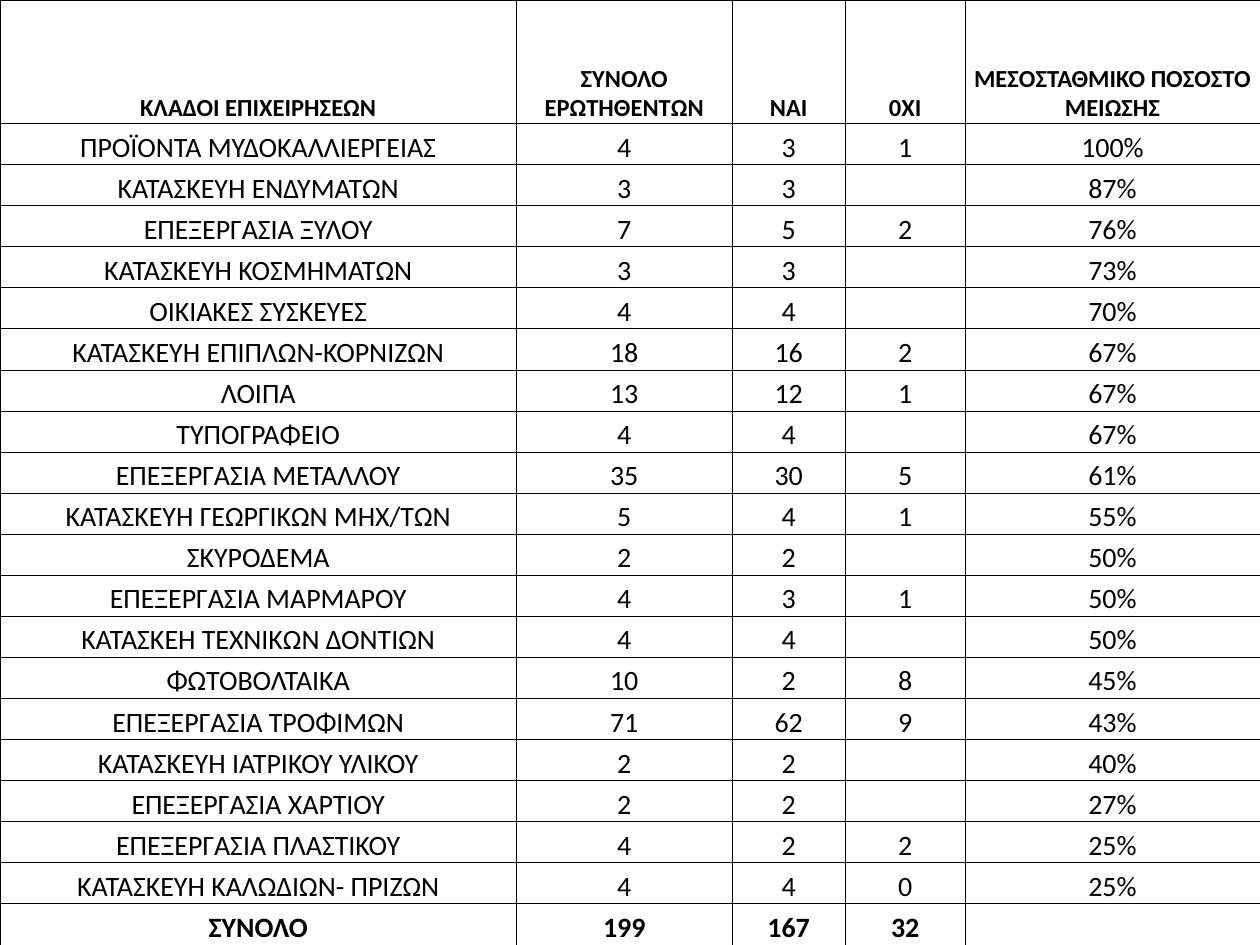
import pptx
import pptx.dml.color
import pptx.enum.text
import pptx.oxml
import pptx.oxml.ns
import pptx.util
from dataclasses import dataclass

Inches = pptx.util.Inches
Pt = pptx.util.Pt
RGBColor = pptx.dml.color.RGBColor


@dataclass(frozen=True)
class Theme:
    font: str = "Calibri"
    ink: str = "000000"
    paper: str = "FFFFFF"
    header_size: int = 14
    body_size: int = 16
    border: float = 0.5


THEME = Theme()

HEADER = ("ΚΛΑΔΟΙ ΕΠΙΧΕΙΡΗΣΕΩΝ", "ΣΥΝΟΛΟ ΕΡΩΤΗΘΕΝΤΩΝ", "ΝΑΙ", "0ΧΙ",
          "ΜΕΣΟΣΤΑΘΜΙΚΟ ΠΟΣΟΣΤΟ ΜΕΙΩΣΗΣ")
SECTORS = [
    ("ΠΡΟΪΟΝΤΑ ΜΥΔΟΚΑΛΛΙΕΡΓΕΙΑΣ", "4", "3", "1", "100%"),
    ("ΚΑΤΑΣΚΕΥΗ ΕΝΔΥΜΑΤΩΝ", "3", "3", "", "87%"),
    ("ΕΠΕΞΕΡΓΑΣΙΑ ΞΥΛΟΥ", "7", "5", "2", "76%"),
    ("ΚΑΤΑΣΚΕΥΗ ΚΟΣΜΗΜΑΤΩΝ", "3", "3", "", "73%"),
    ("ΟΙΚΙΑΚΕΣ ΣΥΣΚΕΥΕΣ", "4", "4", "", "70%"),
    ("ΚΑΤΑΣΚΕΥΗ ΕΠΙΠΛΩΝ-ΚΟΡΝΙΖΩΝ", "18", "16", "2", "67%"),
    ("ΛΟΙΠΑ", "13", "12", "1", "67%"),
    ("ΤΥΠΟΓΡΑΦΕΙΟ", "4", "4", "", "67%"),
    ("ΕΠΕΞΕΡΓΑΣΙΑ ΜΕΤΑΛΛΟΥ", "35", "30", "5", "61%"),
    ("ΚΑΤΑΣΚΕΥΗ ΓΕΩΡΓΙΚΩΝ ΜΗΧ/ΤΩΝ", "5", "4", "1", "55%"),
    ("ΣΚΥΡΟΔΕΜΑ", "2", "2", "", "50%"),
    ("ΕΠΕΞΕΡΓΑΣΙΑ ΜΑΡΜΑΡΟΥ", "4", "3", "1", "50%"),
    ("ΚΑΤΑΣΚΕΗ ΤΕΧΝΙΚΩΝ ΔΟΝΤΙΩΝ", "4", "4", "", "50%"),
    ("ΦΩΤΟΒΟΛΤΑΙΚΑ", "10", "2", "8", "45%"),
    ("ΕΠΕΞΕΡΓΑΣΙΑ ΤΡΟΦΙΜΩΝ", "71", "62", "9", "43%"),
    ("ΚΑΤΑΣΚΕΥΗ ΙΑΤΡΙΚΟΥ ΥΛΙΚΟΥ", "2", "2", "", "40%"),
    ("ΕΠΕΞΕΡΓΑΣΙΑ ΧΑΡΤΙΟΥ", "2", "2", "", "27%"),
    ("ΕΠΕΞΕΡΓΑΣΙΑ ΠΛΑΣΤΙΚΟΥ", "4", "2", "2", "25%"),
    ("ΚΑΤΑΣΚΕΥΗ ΚΑΛΩΔΙΩΝ- ΠΡΙΖΩΝ", "4", "4", "0", "25%"),
]
TOTAL = ("ΣΥΝΟΛΟ", "199", "167", "32", "")
COLUMN_WIDTHS = (4.1, 1.71, 0.9, 0.95, 2.34)
HEADER_HEIGHT = 0.98


def write_cell(cell, text, size=THEME.body_size, bold=False):
    cell.margin_left = cell.margin_right = 0
    cell.margin_top = cell.margin_bottom = 0
    cell.vertical_anchor = pptx.enum.text.MSO_ANCHOR.BOTTOM
    p = cell.text_frame.paragraphs[0]
    p.alignment = pptx.enum.text.PP_ALIGN.CENTER
    if text:
        r = p.add_run()
        r.text = text
        r.font.name = THEME.font
        r.font.size = Pt(size)
        r.font.bold = bold
        r.font.color.rgb = RGBColor.from_string(THEME.ink)


def draw_borders(cell):
    """Outline all four sides; call before the fill, which must follow in the XML."""
    for side in ("lnL", "lnR", "lnT", "lnB"):
        cell._tc.get_or_add_tcPr().append(pptx.oxml.parse_xml(
            f'<a:{side} {pptx.oxml.ns.nsdecls("a")} w="{Pt(THEME.border)}">'
            f'<a:solidFill><a:srgbClr val="{THEME.ink}"/></a:solidFill></a:{side}>'))


prs = pptx.Presentation()
prs.slide_width = Inches(10)
prs.slide_height = Inches(7.5)
s = prs.slides.add_slide(prs.slide_layouts[6])

rows = [HEADER, *SECTORS, TOTAL]
table = s.shapes.add_table(len(rows), len(HEADER), 0, 0,
                           prs.slide_width, prs.slide_height).table
table.first_row = False
table.horz_banding = False
for column, width in zip(table.columns, COLUMN_WIDTHS):
    column.width = Inches(width)
body_height = (prs.slide_height - Inches(HEADER_HEIGHT)) // (len(rows) - 1)

for i, texts in enumerate(rows):
    is_header = texts is HEADER
    table.rows[i].height = Inches(HEADER_HEIGHT) if is_header else body_height
    for j, text in enumerate(texts):
        cell = table.cell(i, j)
        write_cell(cell, text, bold=is_header or texts is TOTAL,
                   size=THEME.header_size if is_header else THEME.body_size)
        draw_borders(cell)
        cell.fill.solid()
        cell.fill.fore_color.rgb = RGBColor.from_string(THEME.paper)

prs.save("out.pptx")
